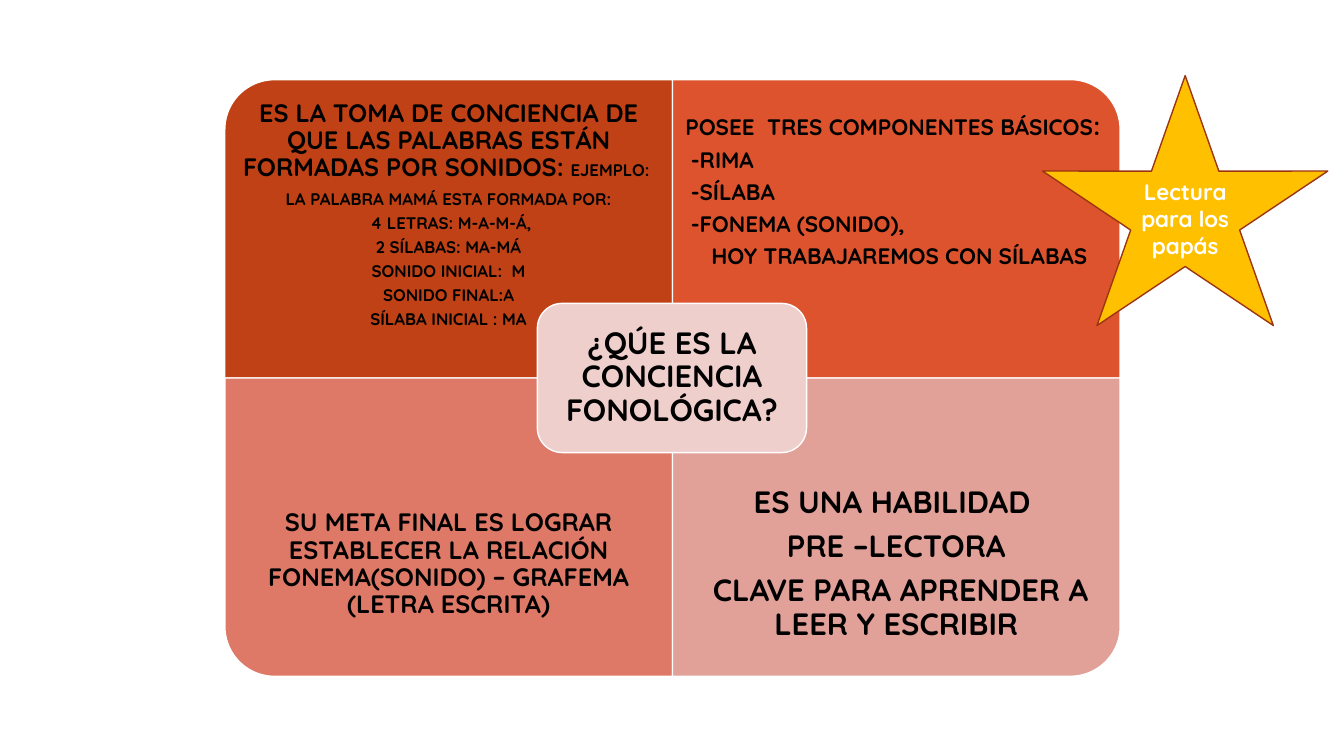
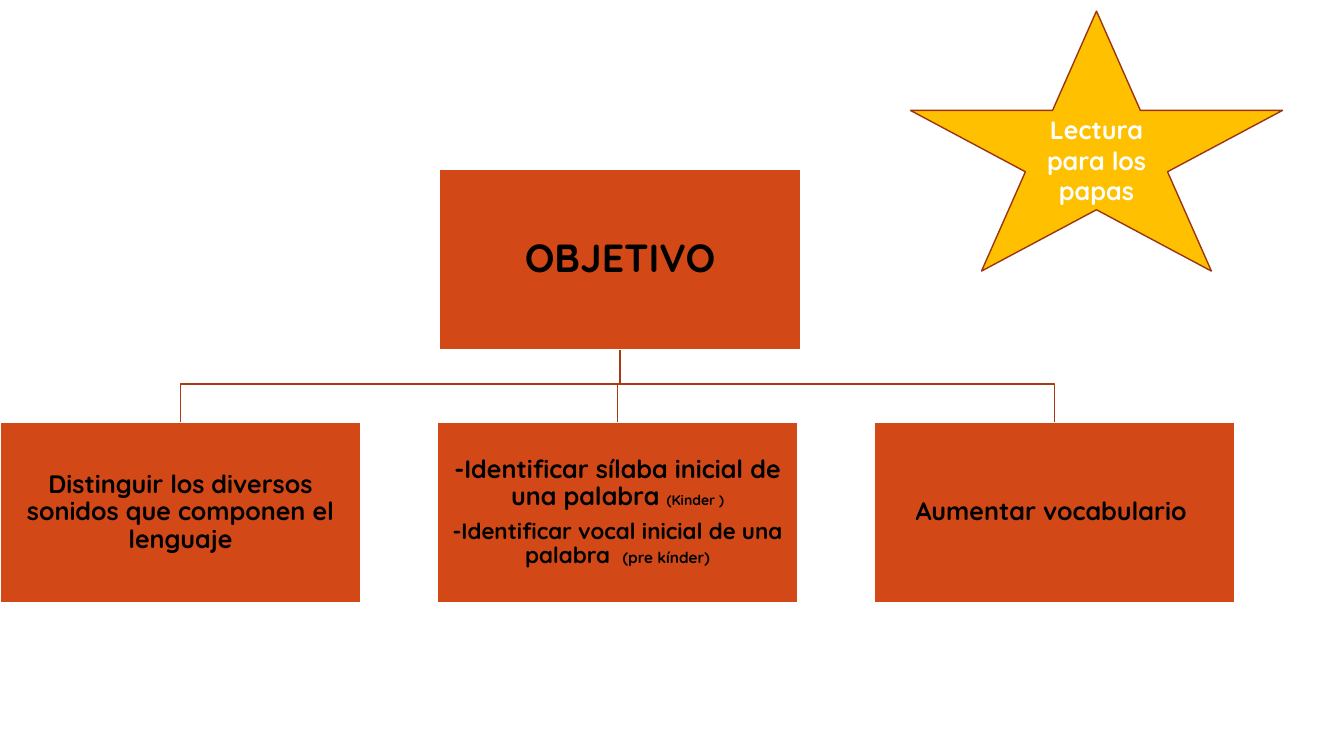
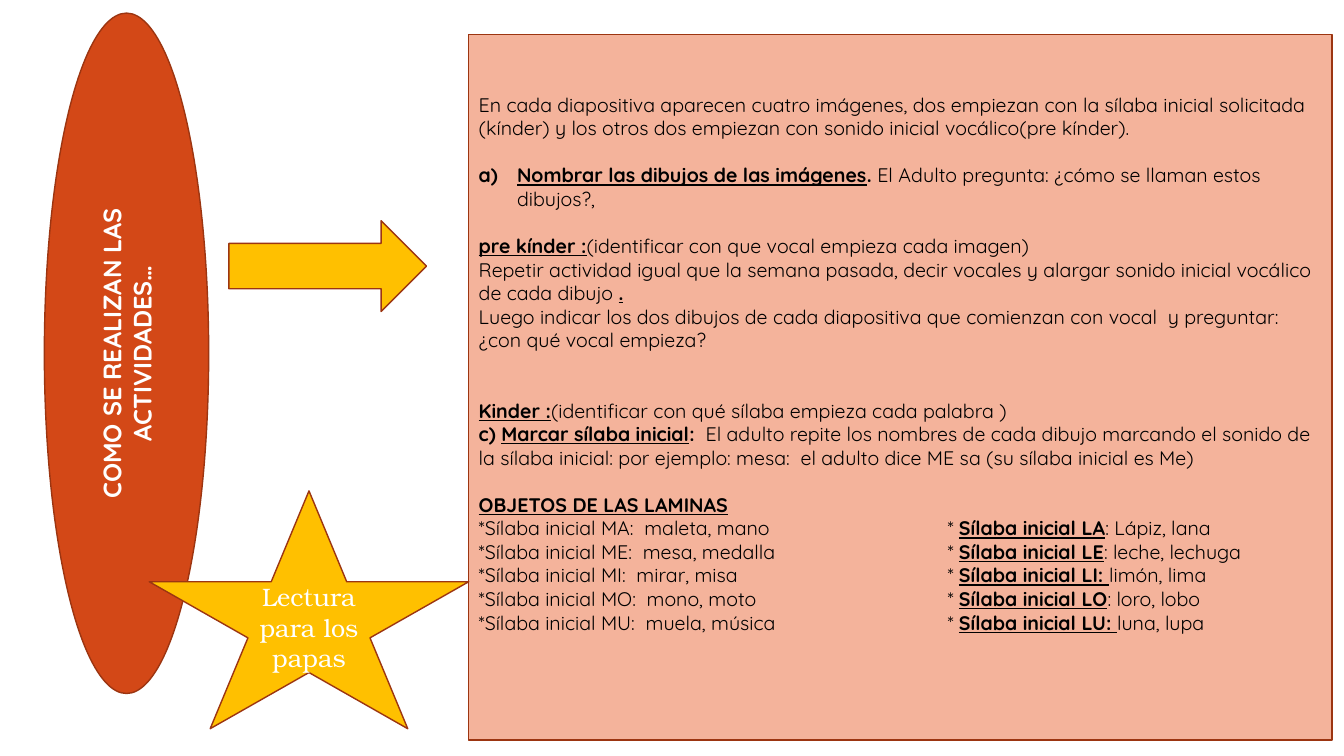
from dataclasses import dataclass

from lxml import etree
from pptx import Presentation
from pptx.dml.color import RGBColor
from pptx.enum.shapes import MSO_SHAPE
from pptx.enum.text import MSO_ANCHOR, PP_ALIGN
from pptx.oxml.ns import qn
from pptx.util import Inches, Pt

CENTER, LEFT = PP_ALIGN.CENTER, PP_ALIGN.LEFT
MIDDLE, TOP = MSO_ANCHOR.MIDDLE, MSO_ANCHOR.TOP
RECT, ROUND_RECT = MSO_SHAPE.RECTANGLE, MSO_SHAPE.ROUNDED_RECTANGLE
ROUND_CORNER, STAR = MSO_SHAPE.ROUND_1_RECTANGLE, MSO_SHAPE.STAR_5_POINT
OVAL, ARROW = MSO_SHAPE.OVAL, MSO_SHAPE.RIGHT_ARROW


@dataclass(frozen=True)
class Theme:
    font: str = "Quicksand"
    serif: str = "TeX Gyre Bonum"
    black: str = "000000"
    white: str = "FFFFFF"
    gold: str = "FFC000"
    orange: str = "D34817"
    outline: str = "9C3511"
    branch: str = "A93A12"
    peach: str = "F4B39B"
    center: str = "EFCFCC"
    quadrants: tuple = ("BF4115", "DD532E", "DD7966", "E1A098")
    tiny: int = 10
    note: int = 11
    small: int = 12
    reading: int = 14
    medium: int = 16
    normal: int = 18
    large: int = 22
    title: int = 28


THEME = Theme()
BOLD = {"bold": True}
PLAIN = {"bold": False}
KEY = {"bold": True, "underline": True}
BLANK_LINE = 16.8  # points, one line of reading text


# ---- Text ----
def apply(target, values):
    for name, value in values.items():
        setattr(target, name, value)


def add_span(para, text, size, color, font, extra):
    span = para.add_run()
    span.text = text
    style = {"name": font, "size": Pt(size), "bold": True}
    apply(span.font, style | extra)
    span.font.color.rgb = RGBColor.from_string(color)


def diagram_para(*spans, align=CENTER):
    """Paragraph of a diagram: spans are (text, size) pairs."""
    gap = 0.35 * max(size for _, size in spans)
    layout = {"alignment": align, "line_spacing": 0.9, "space_after": Pt(gap)}
    return layout, [(text, size, {}) for text, size in spans]


def reading_para(*spans, blanks=0):
    """Paragraph of running text: spans are (text, format) pairs."""
    layout = {"alignment": LEFT}
    if blanks:
        layout["space_before"] = Pt(blanks * BLANK_LINE)
    return layout, [(text, THEME.reading, style) for text, style in spans]


def write(shape, paragraphs, color=THEME.black, font=THEME.font,
          anchor=MIDDLE, insets=(0.1, 0.05, 0.1, 0.05)):
    frame = shape.text_frame
    sides = ("margin_left", "margin_top", "margin_right", "margin_bottom")
    apply(frame, {"word_wrap": True, "vertical_anchor": anchor})
    apply(frame, dict(zip(sides, map(Inches, insets))))
    for index, (layout, spans) in enumerate(paragraphs):
        para = frame.paragraphs[0] if index == 0 else frame.add_paragraph()
        apply(para, layout)
        for text, size, extra in spans:
            add_span(para, text, size, color, font, extra)
    return frame


def number_para(para, indent):
    props = para._p.get_or_add_pPr()
    props.set("marL", str(Inches(indent)))
    props.set("indent", str(-Inches(indent)))
    etree.SubElement(props, qn("a:buAutoNum"), type="alphaLcParenR")


def add_tab(para, position):
    stops = etree.SubElement(para._p.get_or_add_pPr(), qn("a:tabLst"))
    etree.SubElement(stops, qn("a:tab"), pos=str(Inches(position)), algn="l")


# ---- Shapes ----
def paint(shape, fill, line):
    shape.shadow.inherit = False
    if fill:
        shape.fill.solid()
        shape.fill.fore_color.rgb = RGBColor.from_string(fill)
    else:
        shape.fill.background()
    shape.line.color.rgb = RGBColor.from_string(line)
    shape.line.width = Pt(1)


def add_block(page, kind, box, fill, line=THEME.outline, rotation=0):
    shape = page.shapes.add_shape(kind, *map(Inches, box))
    paint(shape, fill, line)
    shape.rotation = rotation
    return shape


def add_label(page, box, paragraphs, inset, anchor=MIDDLE):
    label = page.shapes.add_textbox(*map(Inches, box))
    write(label, paragraphs, anchor=anchor, insets=(inset,) * 4)


def add_star(page, box, text, size=THEME.normal, font=THEME.font, style=BOLD):
    star = add_block(page, STAR, box, THEME.gold)
    write(star, [({"alignment": CENTER}, [(text, size, style)])],
          THEME.white, font)


def add_branch(page, start, end, bend):
    """Open elbow line from a parent node down to a child node."""
    points = [(start[0], bend), (end[0], bend), end]
    builder = page.shapes.build_freeform(*map(Inches, start), scale=1.0)
    builder.add_line_segments([tuple(map(Inches, point)) for point in points],
                              close=False)
    paint(builder.convert_to_shape(), None, THEME.branch)


# ---- Slides ----
def add_definition(page):
    small, medium, normal, large = (THEME.small, THEME.medium, THEME.normal,
                                    THEME.large)
    width, height, middle_x, middle_y = 4.44, 2.96, 6.67, 3.75
    left, top = middle_x - width, middle_y - height
    lower_text = middle_y + height / 4
    examples = ["LA PALABRA MAMÁ ESTA FORMADA POR:", " 4 LETRAS: M-A-M-Á,",
                "2 SÍLABAS: MA-MÁ", "SONIDO INICIAL:  M", "SONIDO FINAL:A",
                "SÍLABA INICIAL : MA"]
    awareness = [diagram_para(
        ("ES LA TOMA DE CONCIENCIA DE QUE LAS PALABRAS ESTÁN FORMADAS POR "
         "SONIDOS: ", normal), ("EJEMPLO: ", small))]
    awareness += [diagram_para((text, small)) for text in examples]
    parts = [diagram_para(("POSEE  TRES COMPONENTES BÁSICOS", medium),
                          (": ", normal))]
    parts += [diagram_para((text, medium), align=LEFT)
              for text in (" -RIMA", " -SÍLABA", " -FONEMA (SONIDO),")]
    parts.append(diagram_para((" HOY TRABAJAREMOS CON SÍLABAS", medium)))
    goal = [diagram_para(("SU META FINAL ES LOGRAR ESTABLECER LA RELACIÓN "
                          "FONEMA(SONIDO) – GRAFEMA (LETRA ESCRITA)", normal))]
    skill = [diagram_para((text, large)) for text in (
        "ES UNA HABILIDAD ", "PRE –LECTORA",
        " CLAVE PARA APRENDER A LEER Y ESCRIBIR")]

    # Text top, text height, inset, anchor and rotation of each quadrant
    quadrants = [
        (awareness, 0.86, 2.64, 0.14, TOP, 270),
        (parts, top, 2.22, 0.12, MIDDLE, 0),
        (goal, lower_text, 2.22, 0.14, MIDDLE, 180),
        (skill, lower_text, 2.22, 0.17, MIDDLE, 90),
    ]
    for index, (paragraphs, text_top, text_height, inset, anchor,
                rotation) in enumerate(quadrants):
        row, column = divmod(index, 2)
        x, y = left + column * width, top + row * height
        box = (x, y, width, height)
        if rotation % 180:  # a quarter turn swaps the sides about the centre
            shift = (width - height) / 2
            box = (x + shift, y - shift, height, width)
        add_block(page, ROUND_CORNER, box, THEME.quadrants[index],
                  THEME.white, rotation)
        add_label(page, (x, text_top, width, text_height), paragraphs, inset,
                  anchor)

    # Question in the centre
    question = add_block(page, ROUND_RECT, (5.33, 3.01, 2.67, 1.48),
                         THEME.center, THEME.white)
    write(question, [diagram_para(("¿QÚE ES LA CONCIENCIA FONOLÓGICA?", large))],
          insets=(0.09,) * 4)
    add_star(page, (10.34, 0.75, 2.83, 2.48), "Lectura para los papás", medium)


def add_objective(page):
    normal = THEME.normal
    width, height, step = 3.58, 1.79, 4.335
    root_left, root_top, child_top = 4.36, 1.68, 4.19
    children = [
        [diagram_para(("Distinguir los diversos sonidos que componen el "
                       "lenguaje", normal))],
        [diagram_para(("-Identificar sílaba inicial de una palabra ", normal),
                      ("(Kinder )", THEME.tiny)),
         diagram_para(("-Identificar vocal inicial de una palabra  ",
                       THEME.medium), ("(pre kínder)", THEME.note))],
        [diagram_para(("Aumentar vocabulario ", normal))],
    ]
    add_star(page, (9.03, 0.11, 3.69, 2.58), "Lectura para los papas")

    # Branches first, so that the nodes lie over them
    start = (root_left + width / 2, root_top + height)
    for index in reversed(range(len(children))):
        add_branch(page, start, (index * step + width / 2, child_top), 3.81)
    nodes = [(root_left, root_top, [diagram_para(("OBJETIVO", THEME.title))])]
    nodes += [(index * step, child_top, paragraphs)
              for index, paragraphs in enumerate(children)]
    for x, y, paragraphs in nodes:
        node = add_block(page, RECT, (x, y, width, height), THEME.orange,
                         THEME.white)
        write(node, paragraphs, insets=(0.01,) * 4)


def add_activities(page):
    heading = add_block(page, OVAL, (-2.12, 2.69, 6.75, 1.63), THEME.orange,
                        rotation=270)
    write(heading, [({"alignment": CENTER},
                     [("COMO SE REALIZAN LAS ACTIVIDADES…", THEME.normal, BOLD)])],
          THEME.white)
    add_block(page, ARROW, (2.27, 2.19, 1.96, 0.9), THEME.gold)

    # Instructions
    instructions = [
        reading_para(("En cada diapositiva aparecen cuatro imágenes, dos "
                      "empiezan con la sílaba inicial solicitada (kínder) y los "
                      "otros dos empiezan con sonido inicial vocálico(pre "
                      "kínder).", PLAIN)),
        reading_para(("Nombrar las dibujos de las imágenes", KEY), (". ", BOLD),
                     ("El Adulto pregunta: ¿cómo se llaman estos dibujos?,",
                      PLAIN), blanks=1),
        reading_para(("pre kínder :", KEY),
                     ("(identificar con que vocal empieza cada imagen)", PLAIN),
                     blanks=1),
        reading_para(("Repetir actividad igual que la semana pasada, decir "
                      "vocales y alargar sonido inicial vocálico de cada "
                      "dibujo ", PLAIN), (".", KEY)),
        reading_para(("Luego indicar los dos dibujos de cada diapositiva que "
                      "comienzan con vocal  y preguntar:¿con qué vocal "
                      "empieza?", PLAIN)),
        reading_para(("Kinder :", KEY),
                     ("(identificar con qué sílaba empieza cada palabra )",
                      PLAIN), blanks=2),
        reading_para(("c) ", BOLD), ("Marcar sílaba inicial", KEY),
                     (":  ", BOLD),
                     ("El adulto repite los nombres de cada dibujo marcando el "
                      "sonido de la sílaba inicial: por ejemplo: mesa:  el "
                      "adulto dice ME sa (su sílaba inicial es Me)", PLAIN)),
        reading_para(("OBJETOS DE LAS LAMINAS", KEY), blanks=1),
    ]
    # Word lists in two columns
    word_rows = [
        ("MA:  maleta, mano", "LA", ": Lápiz, lana"),
        ("ME:  mesa, medalla", "LE", ": leche, lechuga"),
        ("MI:  mirar, misa", "LI: ", "limón, lima"),
        ("MO:  mono, moto", "LO", ": loro, lobo"),
        ("MU:  muela, música", "LU: ", "luna, lupa"),
    ]
    word_lists = [
        reading_para((f"*Sílaba inicial {first}\t* ", PLAIN),
                     (f"Sílaba inicial {syllable}", KEY), (words, PLAIN))
        for first, syllable, words in word_rows]
    panel = add_block(page, RECT, (4.65, 0.34, 8.56, 7), THEME.peach)
    frame = write(panel, instructions + word_lists, anchor=TOP,
                  insets=(0.1, 0.58, 0.1, 0.05))
    number_para(frame.paragraphs[1], 0.38)
    for para in frame.paragraphs[len(instructions):]:
        add_tab(para, 4.65)

    add_star(page, (1.48, 4.87, 3.17, 2.36), "Lectura para los papas",
             font=THEME.serif, style=PLAIN)


def main():
    deck = Presentation()
    deck.slide_width, deck.slide_height = Inches(13.33), Inches(7.5)
    for build in (add_definition, add_objective, add_activities):
        build(deck.slides.add_slide(deck.slide_layouts[6]))
    deck.save("out.pptx")


if __name__ == "__main__":
    main()
